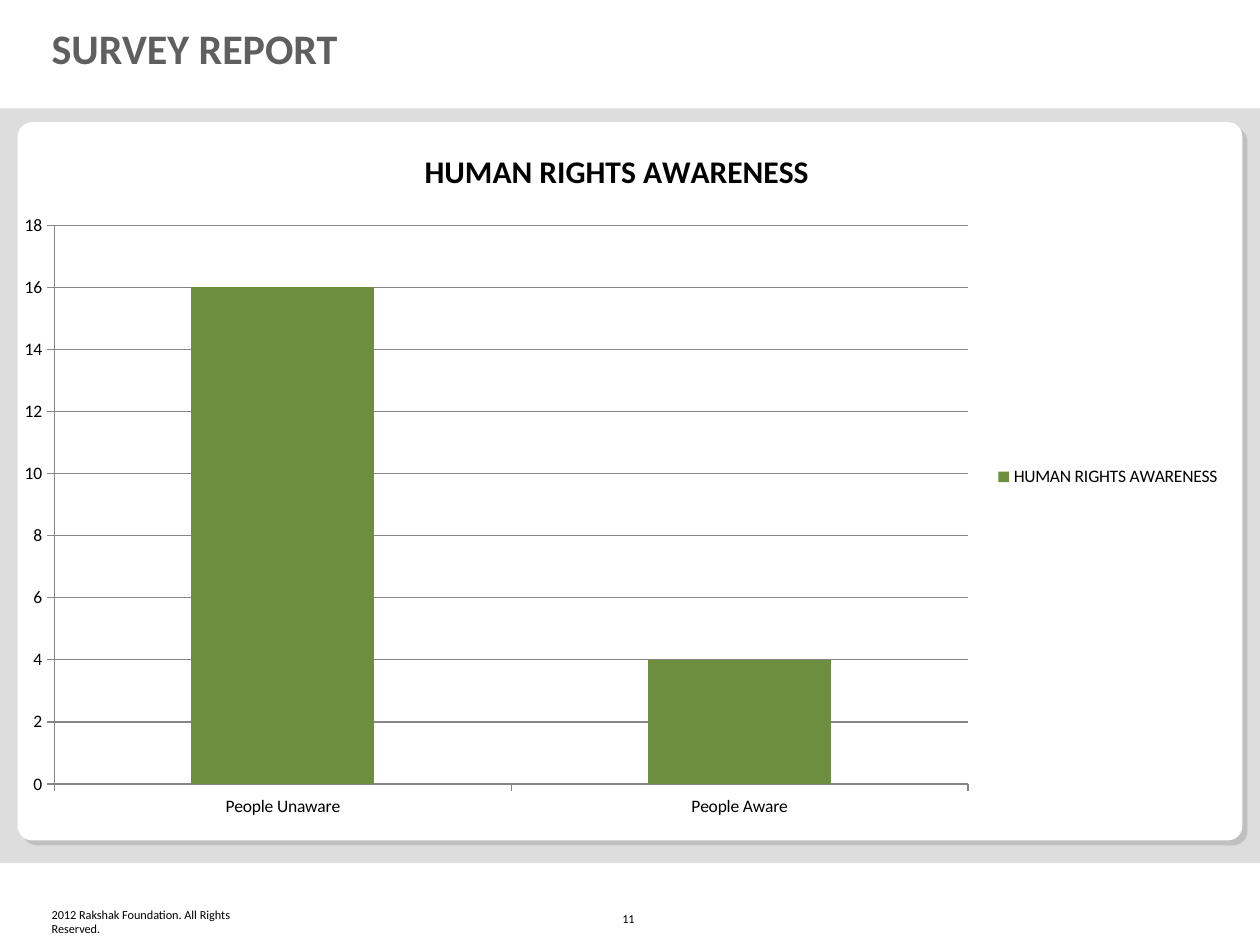
from pptx import Presentation
from pptx.chart.data import CategoryChartData
from pptx.dml.color import RGBColor
from pptx.enum.chart import XL_CHART_TYPE, XL_LEGEND_POSITION, XL_TICK_MARK
from pptx.enum.shapes import MSO_SHAPE
from pptx.enum.text import MSO_ANCHOR, PP_ALIGN
from pptx.util import Inches, Pt

COLUMNS = XL_CHART_TYPE.COLUMN_CLUSTERED
LEGEND_RIGHT = XL_LEGEND_POSITION.RIGHT
TICK_OUTSIDE = XL_TICK_MARK.OUTSIDE
RECTANGLE, ROUNDED = MSO_SHAPE.RECTANGLE, MSO_SHAPE.ROUNDED_RECTANGLE
MIDDLE, BOTTOM = MSO_ANCHOR.MIDDLE, MSO_ANCHOR.BOTTOM
LEFT = PP_ALIGN.LEFT

# Content
TITLE = "SURVEY REPORT"
CHART_TITLE = "HUMAN RIGHTS AWARENESS"
SURVEY = {"People Unaware": 16, "People Aware": 4}
# Panels: preset, place, fill, corner
PANELS = [
    (RECTANGLE, (0, 0.86, 10, 5.99), "DDDDDD", None),
    (ROUNDED, (0.18, 1.01, 9.72, 5.7), "C0C0C0", 0.02),
    (ROUNDED, (0.14, 0.97, 9.72, 5.7), "FFFFFF", 0.02),
]
# Footer: text, place, margin
FOOTERS = [
    ("2012 Rakshak Foundation. All Rights Reserved.", (0.41, 7.18, 1.65, 0.25), 0),
    ("11", (4.84, 7.06, 0.32, 0.34), 0.1),
]
TITLE_FONT = {"name": "Calibri", "size": Pt(24), "bold": True}
FOOTER_FONT = {"name": "Calibri", "size": Pt(7)}
CHART_FONT = {"name": "Calibri", "size": Pt(10)}
CHART_TITLE_FONT = {"name": "Calibri", "size": Pt(18), "bold": True}


def color(value):
    return RGBColor.from_string(value)


def place(values):
    return [Inches(value) for value in values]


def set_font(font, values, shade="000000"):
    for name, value in values.items():
        setattr(font, name, value)
    font.color.rgb = color(shade)


deck = Presentation()
deck.slide_width, deck.slide_height = Inches(10), Inches(7.5)
page = deck.slides.add_slide(deck.slide_layouts[5])

# Background panels
for preset, spot, fill, corner in PANELS:
    panel = page.shapes.add_shape(preset, *place(spot))
    panel.shadow.inherit = False
    panel.fill.solid()
    panel.fill.fore_color.rgb = color(fill)
    panel.line.fill.background()
    if corner:
        panel.adjustments[0] = corner

# Title
title = page.shapes.title
title.left, title.top, title.width, title.height = place((0.31, 0.19, 7.94, 0.44))
title.text_frame.text = TITLE
title.text_frame.vertical_anchor = MIDDLE
para = title.text_frame.paragraphs[0]
para.alignment = LEFT
para.line_spacing = 0.85
set_font(para.runs[0].font, TITLE_FONT, "5F5F5F")

# Copyright line and page number
for text, spot, margin in FOOTERS:
    box = page.shapes.add_textbox(*place(spot))
    frame = box.text_frame
    frame.word_wrap = True
    frame.vertical_anchor = BOTTOM
    frame.margin_left = frame.margin_right = Inches(margin)
    frame.margin_top = frame.margin_bottom = Inches(margin / 2)
    frame.text = text
    set_font(frame.paragraphs[0].runs[0].font, FOOTER_FONT)

# Survey chart
data = CategoryChartData()
data.categories = list(SURVEY)
data.add_series(CHART_TITLE, list(SURVEY.values()))
chart = page.shapes.add_chart(COLUMNS, *place((0, 0.98, 9.79, 5.61)), data).chart
set_font(chart.font, CHART_FONT)
chart.has_title = True
chart.chart_title.text_frame.text = CHART_TITLE
heading = chart.chart_title.text_frame.paragraphs[0].runs[0]
set_font(heading.font, CHART_TITLE_FONT)
chart.has_legend = True
chart.legend.position = LEGEND_RIGHT
chart.legend.include_in_layout = False

plot = chart.plots[0]
plot.gap_width = 150
plot.vary_by_categories = False
bars = plot.series[0].format.fill
bars.solid()
bars.fore_color.rgb = color("6C8E3E")

values = chart.value_axis
values.minimum_scale, values.maximum_scale, values.major_unit = 0, 18, 2
values.has_major_gridlines = True
for axis in (chart.category_axis, values):
    axis.major_tick_mark = TICK_OUTSIDE
for part in (chart.category_axis, values, values.major_gridlines):
    part.format.line.color.rgb = color("868686")
    part.format.line.width = Pt(0.75)

deck.save("out.pptx")
